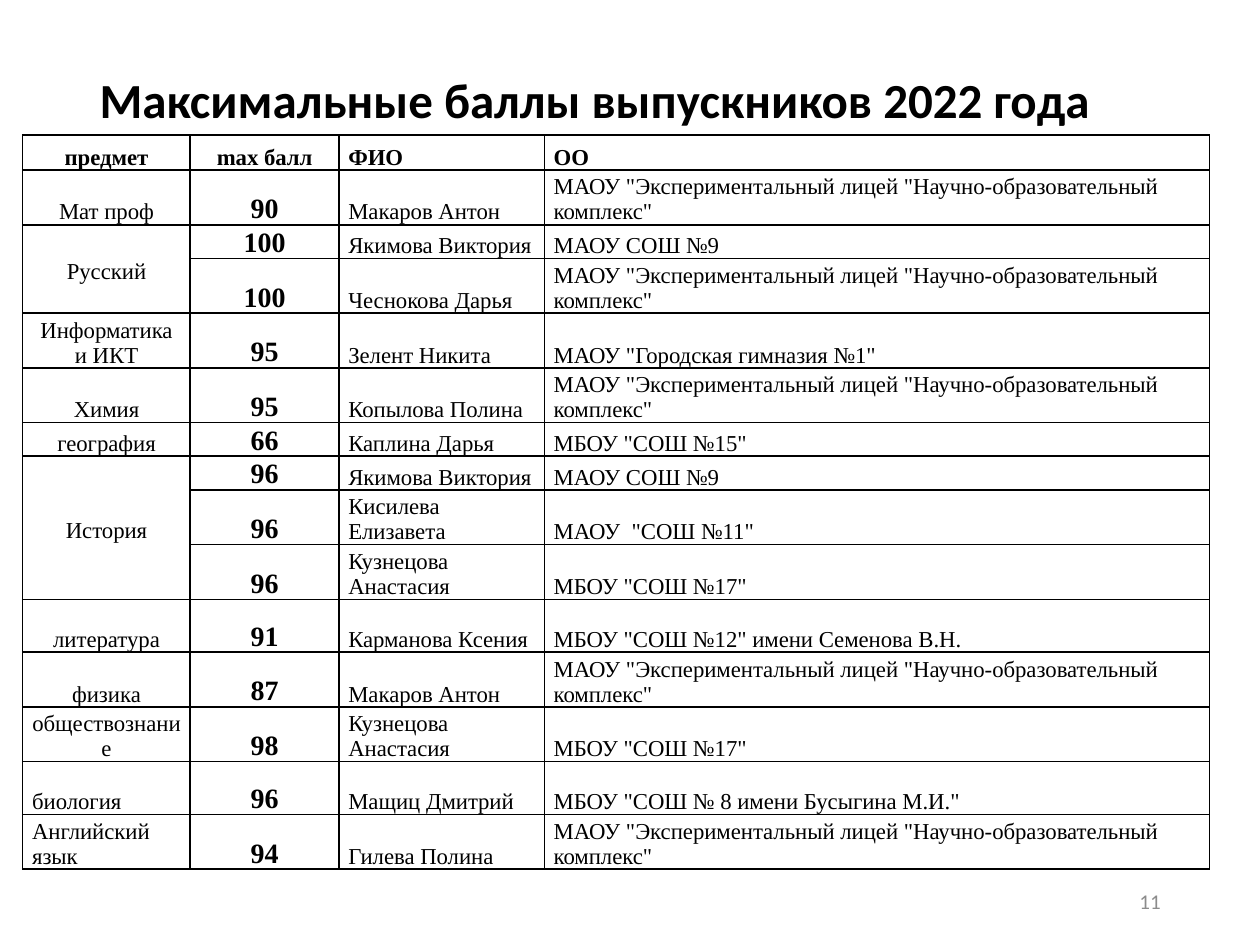
from lxml.etree import SubElement
from pptx import Presentation
from pptx.dml.color import RGBColor
from pptx.enum.text import MSO_ANCHOR, PP_ALIGN
from pptx.oxml.ns import qn
from pptx.util import Inches, Pt

LYCEUM = 'МАОУ "Экспериментальный лицей "Научно-образовательный комплекс"'
HEADER = ("предмет", "max балл", "ФИО", "ОО")
SUBJECTS = [
    ("Мат проф", [("90", "Макаров Антон", LYCEUM)]),
    ("Русский", [("100", "Якимова Виктория", "МАОУ СОШ №9"),
                 ("100", "Чеснокова Дарья", LYCEUM)]),
    ("Информатика и ИКТ", [("95", "Зелент Никита", 'МАОУ "Городская гимназия №1"')]),
    ("Химия", [("95", "Копылова Полина", LYCEUM)]),
    ("география", [("66", "Каплина Дарья", 'МБОУ "СОШ №15"')]),
    ("История", [("96", "Якимова Виктория", "МАОУ СОШ №9"),
                 ("96", "Кисилева Елизавета", 'МАОУ  "СОШ №11"'),
                 ("96", "Кузнецова Анастасия", 'МБОУ "СОШ №17"')]),
    ("литература", [("91", "Карманова Ксения", 'МБОУ "СОШ №12" имени Семенова В.Н.')]),
    ("физика", [("87", "Макаров Антон", LYCEUM)]),
    ("обществознание", [("98", "Кузнецова Анастасия", 'МБОУ "СОШ №17"')]),
    ("биология", [("96", "Мащиц Дмитрий", 'МБОУ "СОШ № 8 имени Бусыгина М.И."')]),
    ("Английский язык", [("94", "Гилева Полина", LYCEUM)]),
]
LEFT_SUBJECTS = {"биология", "Английский язык"}
COLUMNS = (1.33, 1.18, 1.63, 5.28)
HEADER_H, LOW, HIGH = 0.28, 0.24, 0.42
LOW_ROWS = {2, 6, 7, 8, 9}


def rgb(color):
    """Turn a hex string into a colour."""
    return RGBColor.from_string(color)


def write(tf, text, size, font="Times New Roman", color="000000", bold=False,
          align=PP_ALIGN.LEFT, spacing=1.0):
    """Write one formatted run into the first paragraph."""
    p = tf.paragraphs[0]
    p.alignment = align
    p.line_spacing = spacing
    r = p.add_run()
    r.text = text
    r.font.size, r.font.name, r.font.bold = Pt(size), font, bold
    r.font.color.rgb = rgb(color)


def add_title(s, text):
    """Fill and place the title placeholder."""
    sp = s.shapes.title
    sp.left, sp.top, sp.width, sp.height = map(Inches, (0.69, 0.4, 8.62, 0.83))
    sp.text_frame.vertical_anchor = MSO_ANCHOR.MIDDLE
    write(sp.text_frame, text, 28, "Calibri", bold=True, spacing=0.9)


def add_page_number(s, text):
    """Add the page number at the lower right."""
    tf = s.shapes.add_textbox(*map(Inches, (7.06, 6.95, 2.25, 0.4))).text_frame
    tf.word_wrap = True
    tf.vertical_anchor = MSO_ANCHOR.MIDDLE
    write(tf, text, 12, "Calibri", "8C8C8C", align=PP_ALIGN.RIGHT)


def frame_cell(cell):
    """Give a cell thin black borders, narrow margins and no fill."""
    tc_pr = cell._tc.get_or_add_tcPr()
    for side in ("a:lnL", "a:lnR", "a:lnT", "a:lnB"):
        ln = SubElement(tc_pr, qn(side), w=str(Pt(1)))
        SubElement(SubElement(ln, qn("a:solidFill")), qn("a:srgbClr"), val="000000")
    cell.fill.background()
    cell.margin_left = cell.margin_right = Pt(5.4)
    cell.margin_top = cell.margin_bottom = 0
    cell.vertical_anchor = MSO_ANCHOR.BOTTOM


def fill_cell(cell, text, column, header=False):
    """Write a cell in the style of its column."""
    centered = column < 2 and text not in LEFT_SUBJECTS
    write(cell.text_frame, text, 16 if column == 1 and not header else 13,
          bold=header or column == 1,
          align=PP_ALIGN.CENTER if centered else PP_ALIGN.LEFT)


def add_score_table(s):
    """Add the table of best scores, merging subjects with several pupils."""
    count = 1 + sum(len(pupils) for _, pupils in SUBJECTS)
    heights = [HEADER_H] + [LOW if i in LOW_ROWS else HIGH for i in range(1, count)]
    table = s.shapes.add_table(count, len(COLUMNS), Inches(0.18), Inches(1.07),
                               Inches(sum(COLUMNS)), Inches(sum(heights))).table
    table.first_row = table.horz_banding = False
    for column, width in zip(table.columns, COLUMNS):
        column.width = Inches(width)
    for row, height in zip(table.rows, heights):
        row.height = Inches(height)
    for cell in table.iter_cells():
        frame_cell(cell)
    for j, text in enumerate(HEADER):
        fill_cell(table.cell(0, j), text, j, header=True)
    row = 1
    for subject, pupils in SUBJECTS:
        cell = table.cell(row, 0)
        fill_cell(cell, subject, 0)
        if len(pupils) > 1:
            cell.merge(table.cell(row + len(pupils) - 1, 0))
            cell.vertical_anchor = MSO_ANCHOR.MIDDLE
            cell.margin_top = Inches(0.05)
        for pupil in pupils:
            for j, text in enumerate(pupil, 1):
                fill_cell(table.cell(row, j), text, j)
            row += 1


def main():
    """Build and save the slide."""
    prs = Presentation()
    prs.slide_width, prs.slide_height = Inches(10), Inches(7.5)
    s = prs.slides.add_slide(prs.slide_layouts[5])
    add_title(s, "Максимальные баллы выпускников 2022 года")
    add_page_number(s, "11")
    add_score_table(s)
    prs.save("out.pptx")


if __name__ == "__main__":
    main()
